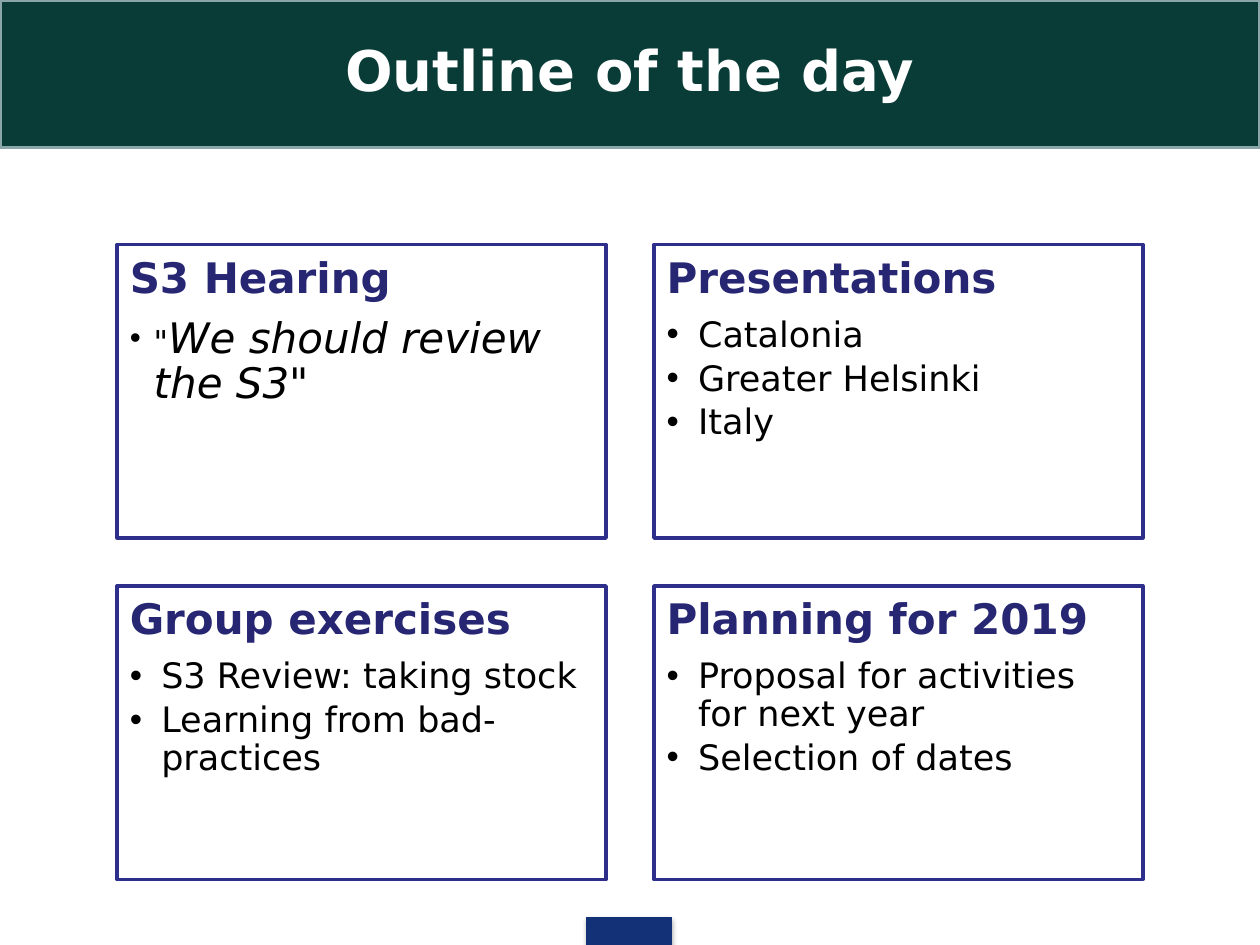
from dataclasses import dataclass

from lxml.etree import SubElement
from pptx import Presentation
from pptx.dml.color import RGBColor
from pptx.enum.shapes import MSO_SHAPE
from pptx.enum.text import MSO_ANCHOR, MSO_AUTO_SIZE, PP_ALIGN
from pptx.oxml.ns import qn
from pptx.util import Inches, Pt


@dataclass(frozen=True)
class Theme:
    font: str = "DejaVu Sans"
    white: str = "FFFFFF"
    banner: str = "093B37"
    banner_line: str = "8AA6A8"
    card_line: str = "2E2E8B"
    heading: str = "262673"
    text: str = "000000"
    tab: str = "133176"
    shadow: str = "000000"
    title_size: int = 32
    heading_size: int = 24
    item_size: int = 20
    mark_size: int = 18


THEME = Theme()
COMPARISON_LAYOUT = 4
CARD_WIDTH, CARD_HEIGHT = 3.88, 2.33
GRID_LEFT, GRID_TOP = 0.93, 1.94
COLUMN_STEP, ROW_STEP = 4.26, 2.71

# Each card: heading, hanging indent, items; an item is a list of (text, size, italic).
CARDS = [
    ("S3 Hearing", 0.19, [[('"', THEME.mark_size, False),
                           ('We should review the S3"', THEME.heading_size, True)]]),
    ("Presentations", 0.25, [[(name, THEME.item_size, False)]
                             for name in ("Catalonia", "Greater Helsinki", "Italy")]),
    ("Group exercises", 0.25, [[(name, THEME.item_size, False)]
                               for name in ("S3 Review: taking stock",
                                            "Learning from bad-practices")]),
    ("Planning for 2019", 0.25, [[(name, THEME.item_size, False)]
                                 for name in ("Proposal for activities for next year",
                                              "Selection of dates")]),
]


def place(box, left, top, width, height):
    box.left, box.top = Inches(left), Inches(top)
    box.width, box.height = Inches(width), Inches(height)


def paint(box, fill, line, line_width):
    box.fill.solid()
    box.fill.fore_color.rgb = RGBColor.from_string(fill)
    box.line.color.rgb = RGBColor.from_string(line)
    box.line.width = Pt(line_width)


def prepare_frame(box, anchor, inset):
    frame = box.text_frame
    frame.word_wrap = True
    frame.auto_size = MSO_AUTO_SIZE.NONE
    frame.vertical_anchor = anchor
    frame.margin_left = frame.margin_right = Inches(inset)
    frame.margin_top = frame.margin_bottom = Inches(inset)
    return frame


def space(para, align, after):
    para.alignment = align
    para.line_spacing = 0.9
    para.space_before = Pt(0)
    para.space_after = Pt(after)


def set_bullet(para, hang):
    """Give the paragraph a bullet with a hanging indent, or neither when hang is 0."""
    properties = para._p.get_or_add_pPr()
    properties.set("marL", str(Inches(hang)))
    properties.set("indent", str(-Inches(hang)))
    if hang:
        SubElement(properties, qn("a:buChar"), char="•")
    else:
        SubElement(properties, qn("a:buNone"))


def add_span(para, text, size, color, bold=False, italic=False):
    span = para.add_run()
    span.text = text
    span.font.name = THEME.font
    span.font.size = Pt(size)
    span.font.bold, span.font.italic = bold, italic
    span.font.color.rgb = RGBColor.from_string(color)


def fill_title(box, text):
    place(box, 0, 0, 10, 1.17)
    paint(box, THEME.banner, THEME.banner_line, 2)
    para = prepare_frame(box, MSO_ANCHOR.MIDDLE, 0.05).paragraphs[0]
    space(para, PP_ALIGN.CENTER, 0)
    add_span(para, text, THEME.title_size, THEME.white, bold=True)


def fill_card(box, column, row, heading, hang, items):
    place(box, GRID_LEFT + column * COLUMN_STEP, GRID_TOP + row * ROW_STEP,
          CARD_WIDTH, CARD_HEIGHT)
    paint(box, THEME.white, THEME.card_line, 2)
    frame = prepare_frame(box, MSO_ANCHOR.TOP, 0.1)
    para = frame.paragraphs[0]
    space(para, PP_ALIGN.LEFT, 8.4)
    set_bullet(para, 0)
    add_span(para, heading, THEME.heading_size, THEME.heading, bold=True)
    for item in items:
        para = frame.add_paragraph()
        para.level = 1
        space(para, PP_ALIGN.LEFT, 3.4)
        set_bullet(para, hang)
        for text, size, italic in item:
            add_span(para, text, size, THEME.text, italic=italic)


def add_footer_tab(page):
    tab = page.shapes.add_shape(MSO_SHAPE.RECTANGLE, Inches(4.66), Inches(7.28),
                                Inches(0.67), Inches(0.22))
    paint(tab, THEME.tab, THEME.tab, 0.75)
    tab.shadow.inherit = False
    effects = tab._element.spPr.find(qn("a:effectLst"))
    shadow = SubElement(effects, qn("a:outerShdw"), blurRad=str(Pt(3.1)),
                        dist=str(Pt(1.8)), dir="5400000", rotWithShape="0")
    color = SubElement(shadow, qn("a:srgbClr"), val=THEME.shadow)
    SubElement(color, qn("a:alpha"), val="35000")


def main():
    deck = Presentation()
    deck.slide_width, deck.slide_height = Inches(10), Inches(7.5)
    page = deck.slides.add_slide(deck.slide_layouts[COMPARISON_LAYOUT])
    add_footer_tab(page)
    fill_title(page.shapes.title, "Outline of the day")
    bodies = list(page.placeholders)[1:]
    for index, (box, card) in enumerate(zip(bodies, CARDS)):
        row, column = divmod(index, 2)
        fill_card(box, column, row, *card)
    deck.save("out.pptx")


if __name__ == "__main__":
    main()
